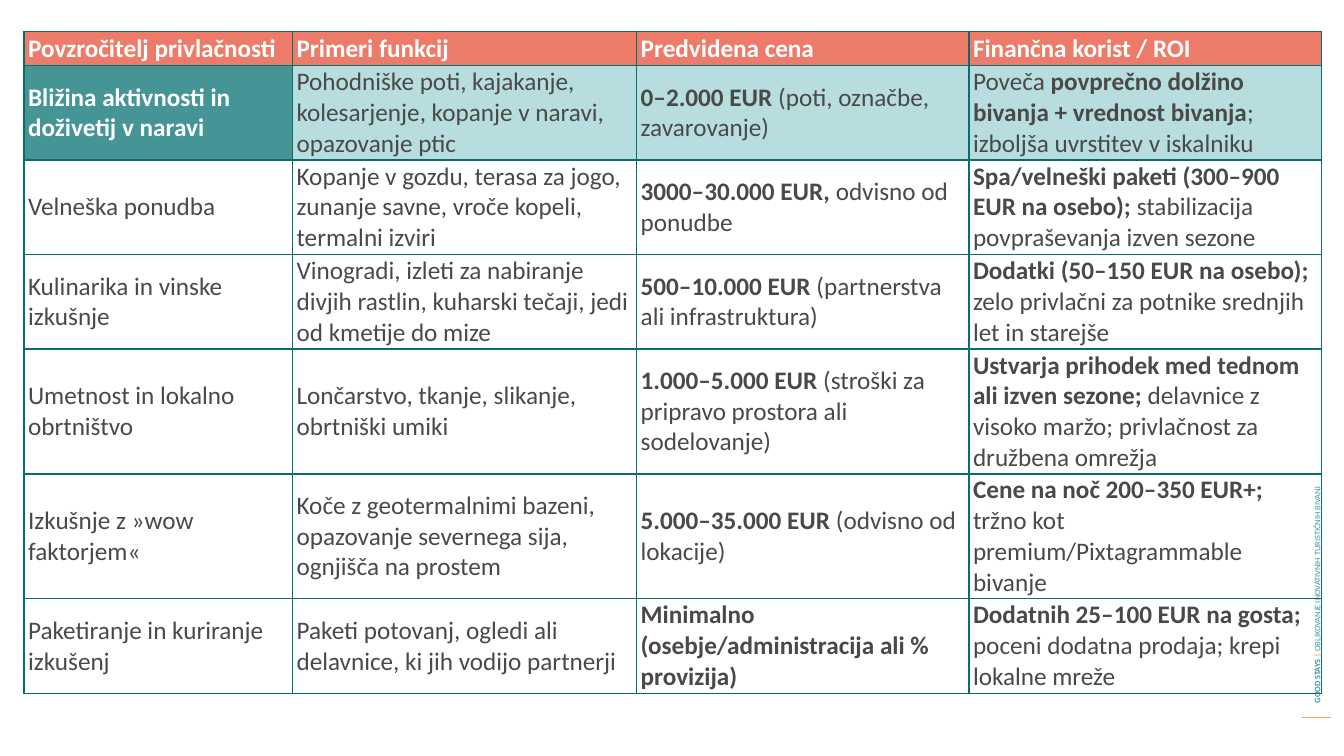
"""Build a slide with a table of attraction drivers, costs and returns."""
from dataclasses import dataclass

from lxml.etree import SubElement
from pptx import Presentation
from pptx.dml.color import RGBColor
from pptx.enum.shapes import MSO_CONNECTOR
from pptx.enum.text import MSO_ANCHOR
from pptx.oxml.ns import qn
from pptx.util import Pt


@dataclass(frozen=True)
class Theme:
    font: str = "Calibri"
    body: float = 18
    small: float = 6
    white: str = "FFFFFF"
    text: str = "494949"
    coral: str = "EC7C69"
    teal: str = "459597"
    pale: str = "B8DDDE"
    border: str = "086D6E"
    orange: str = "FBA63B"
    rule: str = "FBA63D"


def add_run(p, text, size, color, bold):
    r = p.add_run()
    r.text = text
    style = {"name": theme.font, "size": Pt(size), "bold": bold}
    for key, value in style.items():
        setattr(r.font, key, value)
    r.font.color.rgb = RGBColor.from_string(color)


def add_borders(cell):
    tcPr = cell._tc.get_or_add_tcPr()
    for side in ("lnL", "lnR", "lnT", "lnB"):
        ln = SubElement(tcPr, qn(f"a:{side}"), w=str(Pt(1)))
        fill = SubElement(ln, qn("a:solidFill"))
        SubElement(fill, qn("a:srgbClr"), val=theme.border)


theme = Theme()
prs = Presentation()
prs.slide_width, prs.slide_height = Pt(960), Pt(540)
s = prs.slides.add_slide(prs.slide_layouts[6])

line = s.shapes.add_connector(MSO_CONNECTOR.STRAIGHT, Pt(930.2), Pt(512.6), Pt(951.1), Pt(512.6))
line.line.color.rgb = RGBColor.from_string(theme.rule)
line.line.width = Pt(0.75)
SubElement(line._element.spPr, qn("a:effectLst"))

sp = s.shapes.add_textbox(Pt(733), Pt(294.5), Pt(415.4), Pt(14.4))
sp.rotation = 270
tf = sp.text_frame
tf.word_wrap = True
tf.vertical_anchor = MSO_ANCHOR.MIDDLE
footer = [
    ("GOOD STAYS ", theme.teal, True),
    ("| ", theme.orange, True),
    ("OBLIKOVANJE INOVATIVNIH TURISTIČNIH BIVANJ", theme.teal, False),
]
for text, color, bold in footer:
    add_run(tf.paragraphs[0], text, theme.small, color, bold)

# Double asterisks switch bold on and off.
rows = [
    ["**Povzročitelj privlačnosti**", "**Primeri funkcij**",
     "**Predvidena cena**", "**Finančna korist / ROI**"],
    ["**Bližina aktivnosti in doživetij v naravi**",
     "Pohodniške poti, kajakanje, kolesarjenje, kopanje v naravi, opazovanje ptic",
     "**0–2.000 EUR **(poti, označbe, zavarovanje)",
     "Poveča **povprečno dolžino bivanja + vrednost bivanja**; izboljša uvrstitev v iskalniku"],
    ["Velneška ponudba",
     "Kopanje v gozdu, terasa za jogo, zunanje savne, vroče kopeli, termalni izviri",
     "**3000–30.000 EUR, **odvisno od ponudbe",
     "**Spa/velneški paketi (300–900 EUR na osebo); **stabilizacija povpraševanja izven sezone"],
    ["Kulinarika in vinske izkušnje",
     "Vinogradi, izleti za nabiranje divjih rastlin, kuharski tečaji, jedi od kmetije do mize",
     "**500–10.000 EUR **(partnerstva ali infrastruktura)",
     "**Dodatki (50–150 EUR na osebo); **zelo privlačni za potnike srednjih let in starejše"],
    ["Umetnost in lokalno obrtništvo",
     "Lončarstvo, tkanje, slikanje, obrtniški umiki",
     "**1.000–5.000 EUR **(stroški za pripravo prostora ali sodelovanje)",
     "**Ustvarja prihodek med tednom ali izven sezone; **"
     "delavnice z visoko maržo; privlačnost za družbena omrežja"],
    ["Izkušnje z »wow faktorjem«",
     "Koče z geotermalnimi bazeni, opazovanje severnega sija, ognjišča na prostem",
     "**5.000–35.000 EUR **(odvisno od lokacije)",
     "**Cene na noč 200–350 EUR+; **tržno kot premium/Pixtagrammable bivanje"],
    ["Paketiranje in kuriranje izkušenj",
     "Paketi potovanj, ogledi ali delavnice, ki jih vodijo partnerji",
     "**Minimalno (osebje/administracija ali % provizija)**",
     "**Dodatnih 25–100 EUR na gosta; **poceni dodatna prodaja; krepi lokalne mreže"],
]
widths = [191.8, 245.8, 237.4, 251.6]
heights = [24.5, 67.5, 67.5, 67.5, 89.25, 89.25, 67.5]
fills = {0: [theme.coral] * 4, 1: [theme.teal] + [theme.pale] * 3}
cell_format = {
    "margin_left": Pt(2.88), "margin_right": Pt(2.88),
    "margin_top": Pt(0.75), "margin_bottom": Pt(0.75),
    "vertical_anchor": MSO_ANCHOR.MIDDLE,
}

table = s.shapes.add_table(len(rows), len(widths), Pt(17.2), Pt(22.3),
                           Pt(sum(widths)), Pt(sum(heights))).table
table.first_row = table.horz_banding = False
for col, width in zip(table.columns, widths):
    col.width = Pt(width)
for i, (row, height) in enumerate(zip(rows, heights)):
    table.rows[i].height = Pt(height)
    for j, content in enumerate(row):
        cell = table.cell(i, j)
        for key, value in cell_format.items():
            setattr(cell, key, value)
        add_borders(cell)
        fill = fills[i][j] if i in fills else None
        if fill:
            cell.fill.solid()
            cell.fill.fore_color.rgb = RGBColor.from_string(fill)
        else:
            cell.fill.background()
        color = theme.white if fill in (theme.coral, theme.teal) else theme.text
        for k, text in enumerate(content.split("**")):
            if text:
                add_run(cell.text_frame.paragraphs[0], text, theme.body, color, k % 2 == 1)

prs.save("out.pptx")
